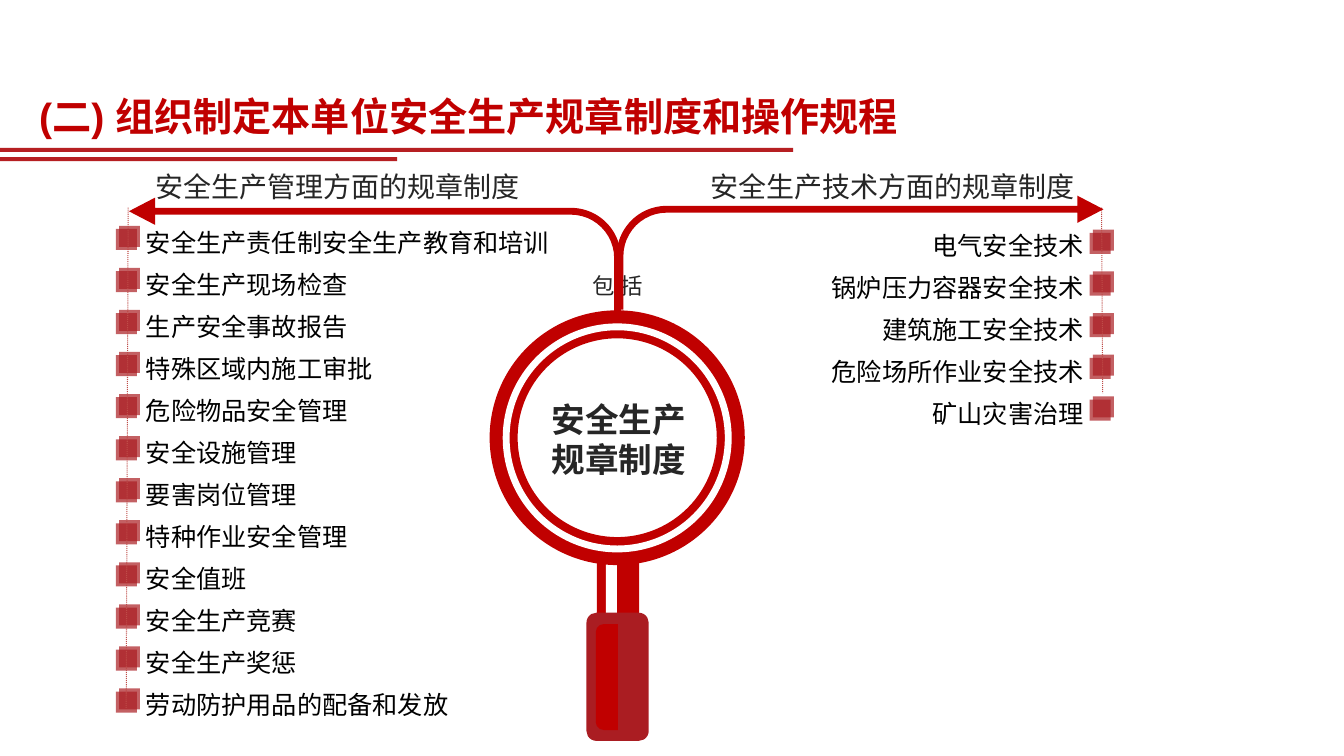
import pptx
import pptx.dml.color
import pptx.enum.dml
import pptx.enum.shapes
import pptx.enum.text
import pptx.oxml.ns
import pptx.oxml.xmlchemy
import pptx.util
from lxml import etree

Cm = pptx.util.Cm
Pt = pptx.util.Pt
qn = pptx.oxml.ns.qn
SHAPE = pptx.enum.shapes.MSO_SHAPE
ALIGN = pptx.enum.text.PP_ALIGN

RED, DARK_RED, BAR_RED = "C00000", "AA1D22", "B61F22"
DOT_RED, WHITE, GREY, BLACK = "BF4C48", "FFFFFF", "262626", "000000"

MANAGEMENT = [
    "安全生产责任制安全生产教育和培训",
    "安全生产现场检查",
    "生产安全事故报告",
    "特殊区域内施工审批",
    "危险物品安全管理",
    "安全设施管理",
    "要害岗位管理",
    "特种作业安全管理",
    "安全值班",
    "安全生产竞赛",
    "安全生产奖惩",
    "劳动防护用品的配备和发放",
]
TECHNOLOGY = [
    "电气安全技术",
    "锅炉压力容器安全技术",
    "建筑施工安全技术",
    "危险场所作业安全技术",
    "矿山灾害治理",
]


def color(value):
    """Return the RGB colour for a hex string."""
    return pptx.dml.color.RGBColor.from_string(value)


def add_shape(s, kind, box, fill, adjustments=(), alpha=None, flip=False, rotation=0):
    """Add a filled preset shape without outline or shadow."""
    sp = s.shapes.add_shape(kind, *map(Cm, box))
    sp.shadow.inherit = False
    sp.fill.solid()
    sp.fill.fore_color.rgb = color(fill)
    sp.line.fill.background()
    sp.rotation = rotation
    for i, value in enumerate(adjustments):
        sp.adjustments[i] = value
    if alpha is not None:
        rgb = sp._element.spPr.find(qn("a:solidFill")).find(qn("a:srgbClr"))
        etree.SubElement(rgb, qn("a:alpha")).set("val", str(alpha * 1000))
    if flip:
        sp._element.spPr.find(qn("a:xfrm")).set("flipH", "1")
    return sp


def add_text(s, box, lines, size, fill, align=ALIGN.CENTER, bold=False, spacing=None):
    """Add a wrapped text box with one paragraph per line."""
    sp = s.shapes.add_textbox(*map(Cm, box))
    tf = sp.text_frame
    tf.word_wrap = True
    for i, line in enumerate(lines):
        p = tf.add_paragraph() if i else tf.paragraphs[0]
        p.alignment = align
        if spacing:
            p.line_spacing = Pt(spacing)
        r = p.add_run()
        r.text = line
        r.font.name = "Arial"
        r.font.size = Pt(size)
        r.font.bold = bold
        r.font.color.rgb = color(fill)
    return tf


def add_bullets(s, left, top, pitch, count):
    """Add a column of doubled translucent squares."""
    for i in range(count):
        for shift in (0, 0.08):
            box = (left + shift, top + i * pitch - shift, 0.53, 0.53)
            add_shape(s, SHAPE.RECTANGLE, box, DARK_RED, alpha=70)


def add_dotted_line(s, *ends):
    """Add a thin dotted connector."""
    straight = pptx.enum.shapes.MSO_CONNECTOR.STRAIGHT
    sp = s.shapes.add_connector(straight, *map(Cm, ends))
    sp.line.color.rgb = color(DOT_RED)
    sp.line.width = Pt(0.75)
    sp.line.dash_style = pptx.enum.dml.MSO_LINE.ROUND_DOT
    etree.SubElement(sp._element.spPr, qn("a:effectLst"))


def add_magnifier(s):
    """Add the magnifying glass with its stem, grip and ring."""
    add_shape(s, SHAPE.RECTANGLE, (15.04, 13.94, 1.07, 2.69), RED)
    add_shape(s, SHAPE.RECTANGLE, (15.27, 13.94, 0.28, 2.69), WHITE)
    add_shape(s, SHAPE.ROUNDED_RECTANGLE, (14.78, 15.44, 1.57, 3.23), DARK_RED, [0.16])
    add_shape(s, SHAPE.DONUT, (12.34, 7.82, 6.43, 6.42), RED, [0.11])
    add_shape(s, SHAPE.ROUND_2_SAME_RECTANGLE, (13.96, 16.78, 2.67, 0.56), RED,
              [0.36, 0], rotation=270)
    add_shape(s, SHAPE.DONUT, (12.67, 8.15, 5.77, 5.77), WHITE, [0.03])


def main():
    """Build the slide and save it."""
    prs = pptx.Presentation()
    prs.slide_width, prs.slide_height = Cm(33.87), Cm(19.05)
    s = prs.slides.add_slide(prs.slide_layouts[6])

    add_shape(s, SHAPE.RECTANGLE, (0, 3.73, 19.99, 0.1), BAR_RED)
    add_shape(s, SHAPE.RECTANGLE, (0, 3.96, 10.01, 0.1), BAR_RED)
    add_text(s, (20.32, 5.38, 7.24, 5.59), TECHNOLOGY, 18, BLACK, ALIGN.RIGHT, spacing=30)
    tf = add_text(s, (3.68, 5.31, 11.4, 13.08), MANAGEMENT, 18, BLACK, ALIGN.LEFT, spacing=30)
    tf.margin_left = Cm(0)

    add_magnifier(s)
    add_text(s, (13.46, 9.93, 4.27, 2.31), ["安全生产规章制度"], 24, GREY, bold=True)
    add_text(s, (14.48, 6.73, 2.18, 0.94), ["包 括"], 16, GREY)

    add_text(s, (2.16, 4.14, 12.7, 1.12), ["安全生产管理方面的规章制度"], 20, GREY)
    add_bullets(s, 2.92, 5.77, 1.06, len(MANAGEMENT))
    add_text(s, (16.15, 4.14, 12.7, 1.12), ["安全生产技术方面的规章制度"], 20, GREY)
    add_bullets(s, 27.46, 5.87, 1.05, len(TECHNOLOGY))
    add_dotted_line(s, 3.23, 5.23, 3.18, 17.86)
    add_dotted_line(s, 27.76, 5.23, 27.79, 9.91)

    bend = [0.06, 0.12, 0.23, 0.44]
    add_shape(s, SHAPE.BENT_ARROW, (15.54, 4.93, 12.27, 2.87), RED, bend)
    add_shape(s, SHAPE.BENT_ARROW, (3.25, 4.98, 12.4, 2.87), RED, bend, flip=True)
    add_text(s, (0.74, 2.21, 30.4, 1.45), ["(二) 组织制定本单位安全生产规章制度和操作规程"],
             28, RED, ALIGN.LEFT, bold=True)
    prs.save("out.pptx")


if __name__ == "__main__":
    main()
